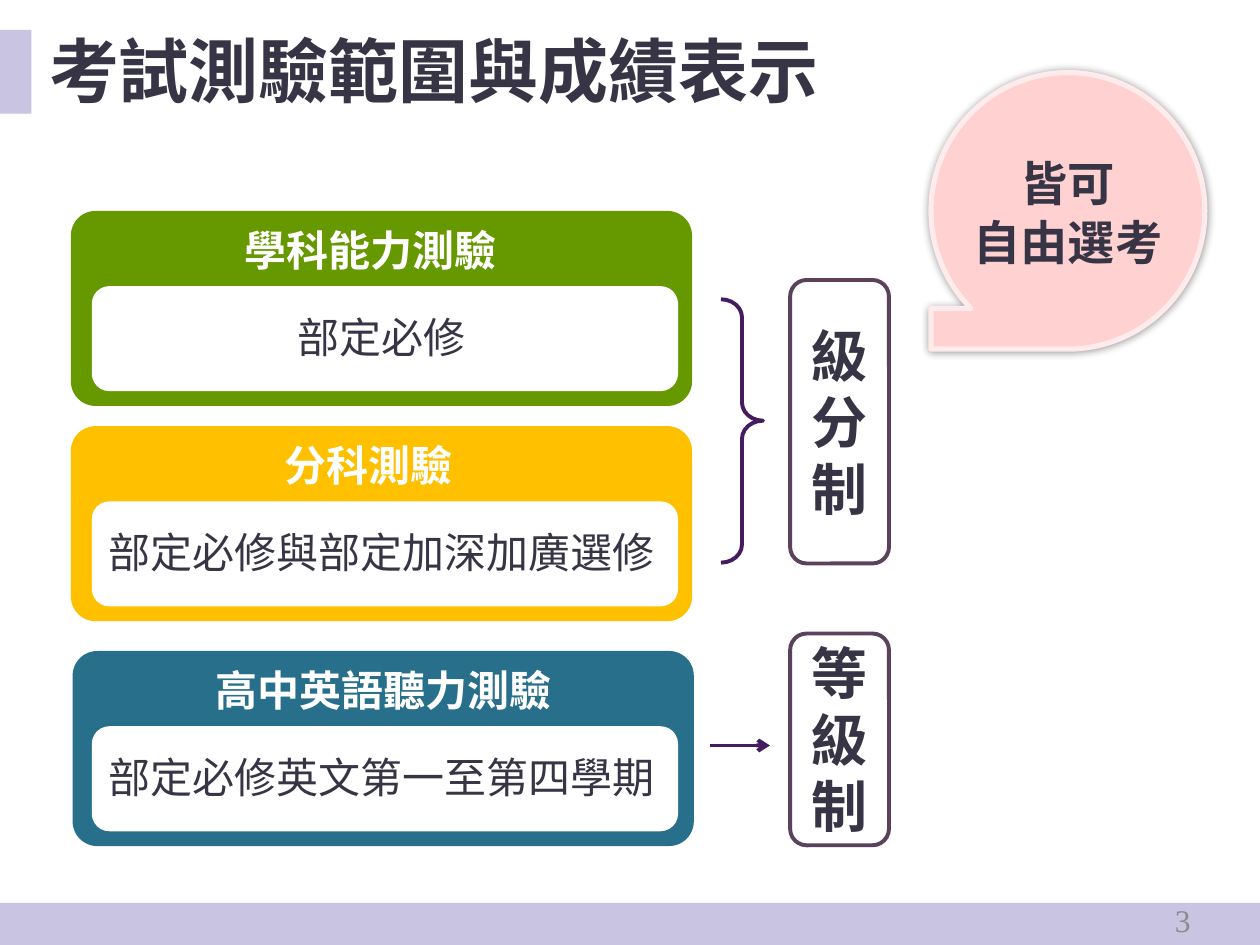
from lxml.etree import SubElement
from pptx import Presentation
from pptx.dml.color import RGBColor
from pptx.enum.shapes import MSO_CONNECTOR, MSO_SHAPE
from pptx.enum.text import MSO_ANCHOR, PP_ALIGN
from pptx.oxml.ns import qn
from pptx.util import Pt

SERIF = "Times New Roman"
CJK = "Noto Sans CJK SC"
INK = "373545"
WHITE = "FFFFFF"
LAVENDER = "C8C4E2"
PURPLE = "441D61"
PLUM = "5C415D"


def color(hex_value):
    return RGBColor.from_string(hex_value)


def points(*lengths):
    return [Pt(length) for length in lengths]


def add_shape(slide, kind, box, fill=None, outline=None, weight=2.25, adjust=()):
    shape = slide.shapes.add_shape(kind, *points(*box))
    shape.shadow.inherit = False
    for index, value in enumerate(adjust):
        shape.adjustments[index] = value
    if fill:
        shape.fill.solid()
        shape.fill.fore_color.rgb = color(fill)
    else:
        shape.fill.background()
    if outline:
        shape.line.color.rgb = color(outline)
        shape.line.width = Pt(weight)
    else:
        shape.line.fill.background()
    return shape


def write(holder, text, size, ink=INK, font=SERIF, bold=False,
          align=PP_ALIGN.CENTER, spacing=None):
    frame = holder.text_frame
    frame.word_wrap = True
    frame.vertical_anchor = MSO_ANCHOR.MIDDLE
    frame.text = text
    for paragraph in frame.paragraphs:
        paragraph.alignment = align
        if spacing:
            paragraph.line_spacing = spacing
        paragraph.font.size = Pt(size)
        paragraph.font.bold = bold
        paragraph.font.color.rgb = color(ink)
        paragraph.font.name = font
        defaults = paragraph._p.pPr.find(qn("a:defRPr"))
        SubElement(defaults, qn("a:ea")).set("typeface", CJK)
    return frame


def add_text(slide, box, text, size, **style):
    return write(slide.shapes.add_textbox(*points(*box)), text, size, **style)


def add_title(slide, text):
    title = slide.shapes.title
    title.left, title.top, title.width, title.height = points(0, 10, 720, 65.5)
    frame = write(title, text, 40, bold=True, align=PP_ALIGN.LEFT, spacing=0.9)
    frame.margin_left = Pt(28)


def add_exam_card(slide, left, top, fill, exam, scope, exam_center):
    add_shape(slide, MSO_SHAPE.ROUNDED_RECTANGLE, (left, top, 355, 111.5), fill,
              adjust=[0.127])
    add_shape(slide, MSO_SHAPE.ROUNDED_RECTANGLE, (52.5, top + 43, 335, 60), WHITE,
              adjust=[0.167])
    add_text(slide, (exam_center - 140, top + 4, 280, 36), exam, 24,
             ink=WHITE, font=CJK, bold=True)
    add_text(slide, (46, top + 54.5, 344, 35.5), scope, 24, font=CJK, spacing=Pt(28))


def add_grading_box(slide, top, height, grading):
    box = add_shape(slide, MSO_SHAPE.ROUNDED_RECTANGLE, (451.5, top, 56.5, height),
                    outline=PLUM)
    write(box, grading, 32, bold=True, spacing=Pt(38))


def add_arrow(slide, left, right, y):
    arrow = slide.shapes.add_connector(MSO_CONNECTOR.STRAIGHT, *points(left, y, right, y))
    arrow.line.color.rgb = color(PURPLE)
    arrow.line.width = Pt(2.25)
    SubElement(arrow.line._get_or_add_ln(), qn("a:tailEnd")).set("type", "arrow")
    SubElement(arrow._element.spPr, qn("a:effectLst"))


def add_callout(slide, text):
    callout = add_shape(slide, MSO_SHAPE.FLOWCHART_SEQUENTIAL_ACCESS_STORAGE,
                        (532, 41.5, 156.5, 158), "FFD1D1", "FFEBEB", 3)
    properties = callout._element.spPr
    properties.find(qn("a:xfrm")).set("flipH", "1")
    glow = SubElement(properties.find(qn("a:effectLst")), qn("a:outerShdw"),
                      blurRad=str(Pt(5)), dist="0", dir="0", rotWithShape="0")
    shade = SubElement(glow, qn("a:srgbClr"), val="000000")
    SubElement(shade, qn("a:alpha"), val="40000")
    frame = write(callout, text, 27, bold=True, spacing=Pt(34))
    frame.margin_left = frame.margin_right = frame.margin_top = frame.margin_bottom = 0


def main():
    presentation = Presentation()
    presentation.slide_width, presentation.slide_height = points(720, 540)
    slide = presentation.slides.add_slide(presentation.slide_layouts[5])

    add_shape(slide, MSO_SHAPE.RECTANGLE, (0, 516, 720, 24), LAVENDER)
    add_shape(slide, MSO_SHAPE.RECTANGLE, (0, 17, 18, 48), LAVENDER)
    add_title(slide, "考試測驗範圍與成績表示")
    add_text(slide, (525.5, 511, 162, 29), "3", 18, ink="8C8C8C", align=PP_ALIGN.RIGHT)
    add_callout(slide, "皆可\n自由選考")

    exams = [
        (40.5, 120.5, "669900", "學科能力測驗", "部定必修", 212),
        (40.5, 243.5, "FFC000", "分科測驗", "部定必修與部定加深加廣選修", 210.5),
        (41.5, 372, "276F8B", "高中英語聽力測驗", "部定必修英文第一至第四學期", 219),
    ]
    for exam in exams:
        add_exam_card(slide, *exam)

    add_grading_box(slide, 160, 162, "級分制")
    add_grading_box(slide, 362, 121, "等級制")
    add_shape(slide, MSO_SHAPE.RIGHT_BRACE, (412, 171, 24, 150.5), outline=PURPLE,
              adjust=[0.432, 0.461])
    add_arrow(slide, 406, 440, 426)

    presentation.save("out.pptx")


if __name__ == "__main__":
    main()
